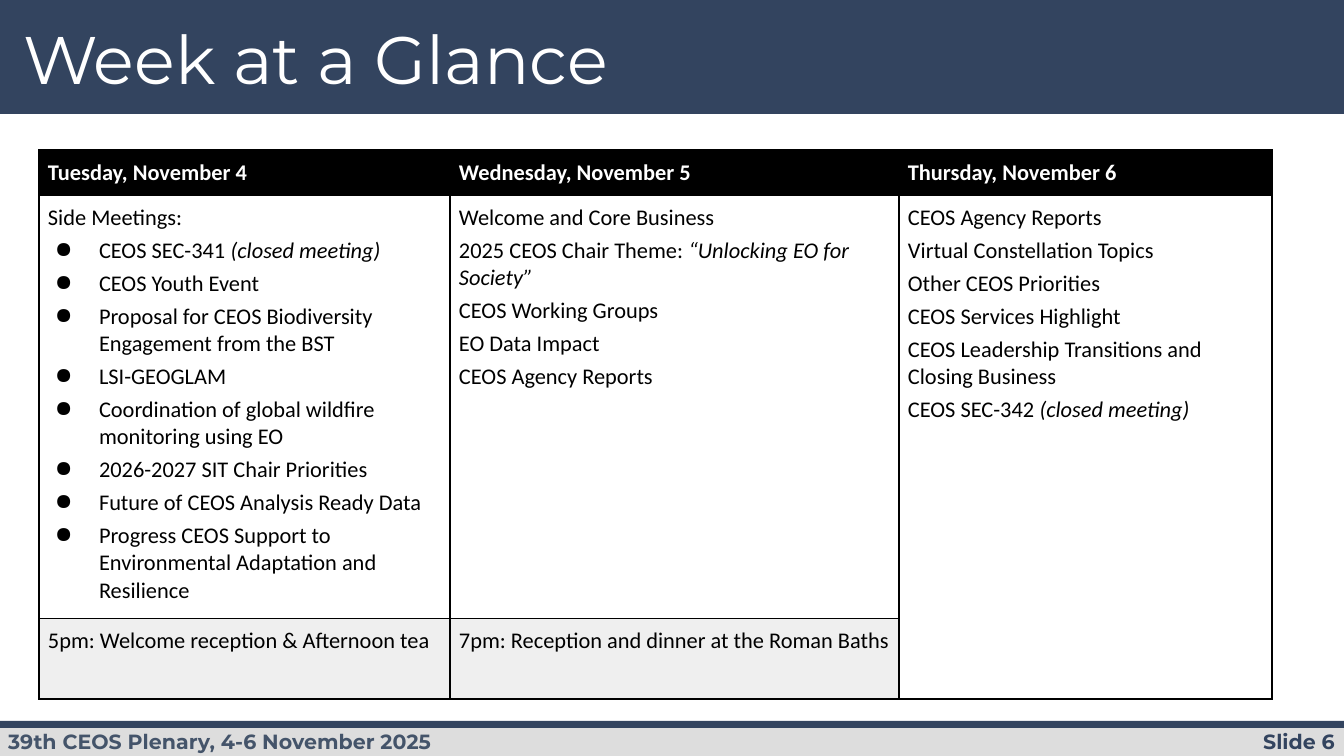
from lxml import etree
from pptx import Presentation
from pptx import util as u
from pptx.dml.color import RGBColor
from pptx.enum import shapes, text
from pptx.oxml import ns

NAVY = RGBColor(0x33, 0x44, 0x5F)
SLATE = RGBColor(0x44, 0x54, 0x6A)
SILVER = RGBColor(0xDD, 0xDD, 0xDD)
PALE = RGBColor(0xEF, 0xEF, 0xEF)
WHITE = RGBColor(0xFF, 0xFF, 0xFF)
BLACK = RGBColor(0x00, 0x00, 0x00)
PX = 914400 / 134.4


def px(*lengths):
    return [u.Emu(round(length * PX)) for length in lengths]


def write(paragraph, wording, font="Calibri", size=12, color=BLACK, bold=False, align=None):
    paragraph.alignment = align
    for index, part in enumerate(wording.split("*")):
        if part:
            run = paragraph.add_run()
            run.text = part
            run.font.name = font
            run.font.size = u.Pt(size)
            run.font.color.rgb = color
            run.font.bold = bold
            run.font.italic = index % 2 == 1


presentation = Presentation()
presentation.slide_width, presentation.slide_height = px(1344, 756)
slide = presentation.slides.add_slide(presentation.slide_layouts[5])

bars = [((0, 0, 1344, 114), NAVY), ((0, 724, 1344, 32), SILVER), ((0, 721, 1344, 7), NAVY)]
for box, color in bars:
    bar = slide.shapes.add_shape(shapes.MSO_SHAPE.RECTANGLE, *px(*box))
    bar.shadow.inherit = False
    bar.fill.solid()
    bar.fill.fore_color.rgb = color
    bar.line.fill.background()

title = slide.shapes.title
title.element.getparent().append(title.element)
title.left, title.top, title.width, title.height = px(14, 12, 956, 92)
slide_number = slide.shapes.add_textbox(*px(1132, 724, 212, 35))
event = slide.shapes.add_textbox(*px(-5, 716, 513, 52))
labels = [
    (title, (9, 5), "Week at a Glance", dict(size=36, color=WHITE, align=text.PP_ALIGN.LEFT)),
    (slide_number, (9, 5), "Slide 6", dict(size=11, color=NAVY, bold=True, align=text.PP_ALIGN.RIGHT)),
    (event, (13, 13), "39th CEOS Plenary, 4-6 November 2025", dict(size=11, color=SLATE, bold=True)),
]
for shape, insets, wording, style in labels:
    frame = shape.text_frame
    frame.word_wrap = True
    frame.auto_size = text.MSO_AUTO_SIZE.NONE
    frame.vertical_anchor = text.MSO_ANCHOR.TOP
    frame.margin_left, frame.margin_top = px(*insets)
    frame.margin_right, frame.margin_bottom = px(*insets)
    write(frame.paragraphs[0], wording, font="Montserrat", **style)

widths = [411, 449, 373]
heights = [45, 423, 81]
days = ["Tuesday, November 4", "Wednesday, November 5", "Thursday, November 6"]
sessions = [
    [
        "Side Meetings:",
        "CEOS SEC-341 *(closed meeting)*",
        "CEOS Youth Event",
        "Proposal for CEOS Biodiversity Engagement from the BST",
        "LSI-GEOGLAM",
        "Coordination of global wildfire monitoring using EO",
        "2026-2027 SIT Chair Priorities",
        "Future of CEOS Analysis Ready Data",
        "Progress CEOS Support to Environmental Adaptation and Resilience",
    ],
    [
        "Welcome and Core Business",
        "2025 CEOS Chair Theme: *“Unlocking EO for Society”*",
        "CEOS Working Groups",
        "EO Data Impact",
        "CEOS Agency Reports",
    ],
    [
        "CEOS Agency Reports",
        "Virtual Constellation Topics",
        "Other CEOS Priorities",
        "CEOS Services Highlight",
        "CEOS Leadership Transitions and Closing Business",
        "CEOS SEC-342 *(closed meeting)*",
    ],
]
evenings = ["5pm: Welcome reception & Afternoon tea", "7pm: Reception and dinner at the Roman Baths", ""]
rows = [[[day] for day in days], sessions, [[evening] for evening in evenings]]
row_fills = [BLACK, None, PALE]

table = slide.shapes.add_table(3, 3, *px(39, 150, sum(widths), sum(heights))).table
for column, width in zip(table.columns, px(*widths)):
    column.width = width
for row, height in zip(table.rows, px(*heights)):
    row.height = height
table.cell(1, 2).merge(table.cell(2, 2))

for row_index, row in enumerate(rows):
    for column_index, items in enumerate(row):
        cell = table.cell(row_index, column_index)
        cell.margin_left = cell.margin_right = cell.margin_top = cell.margin_bottom = px(9)[0]
        properties = cell._tc.get_or_add_tcPr()
        for side in ("a:lnL", "a:lnR", "a:lnT", "a:lnB"):
            border = etree.SubElement(properties, ns.qn(side), w=str(u.Pt(1)))
            border_fill = etree.SubElement(border, ns.qn("a:solidFill"))
            etree.SubElement(border_fill, ns.qn("a:srgbClr"), val=str(BLACK))
        if row_fills[row_index] is None or cell.is_spanned:
            cell.fill.background()
        else:
            cell.fill.solid()
            cell.fill.fore_color.rgb = row_fills[row_index]
        for index, item in enumerate(items):
            frame = cell.text_frame
            paragraph = frame.add_paragraph() if index else frame.paragraphs[0]
            if index and column_index == 0:
                indents = paragraph._p.get_or_add_pPr()
                indents.set("marL", str(px(51)[0]))
                indents.set("indent", str(px(-44)[0]))
                bullet_color = etree.SubElement(indents, ns.qn("a:buClr"))
                etree.SubElement(bullet_color, ns.qn("a:srgbClr"), val=str(BLACK))
                etree.SubElement(indents, ns.qn("a:buChar"), char="●")
            if index:
                paragraph.space_before = u.Pt(3)
            if row_index and index == len(items) - 1:
                paragraph.space_after = u.Pt(3)
            header = row_index == 0
            write(paragraph, item, color=WHITE if header else BLACK, bold=header)

presentation.save("out.pptx")
